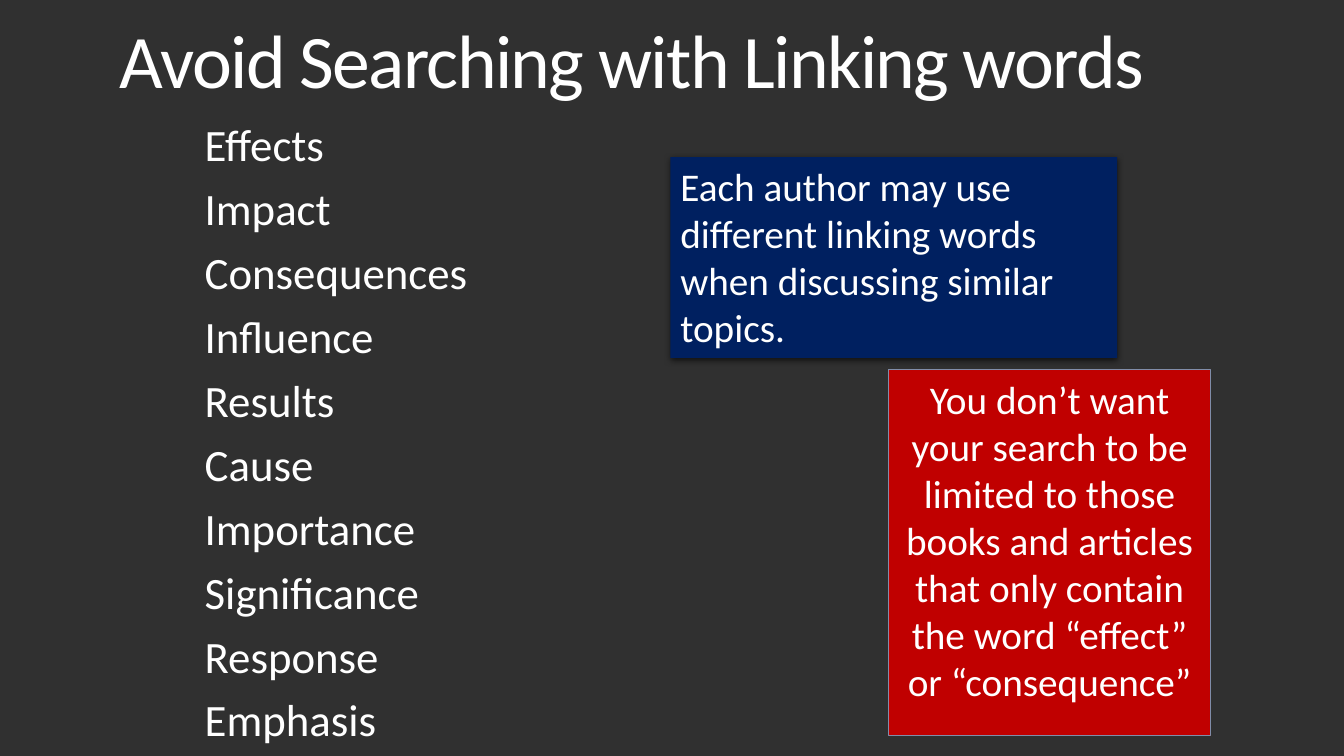
from lxml import etree
from pptx import Presentation
from pptx import util as u
from pptx.dml import color
from pptx.enum import shapes, text
from pptx.oxml import ns

TITLE = "Avoid Searching with Linking words"
LINKING_WORDS = [
    "Effects", "Impact", "Consequences", "Influence", "Results",
    "Cause", "Importance", "Significance", "Response", "Emphasis",
]
AUTHOR_NOTE = "Each author may use different linking words when discussing similar topics."
LIMIT_NOTE = (
    "You don’t want your search to be limited to those books and articles "
    "that only contain the word “effect” or “consequence”"
)
FRAME_FORMAT = {"word_wrap": True, "auto_size": text.MSO_AUTO_SIZE.NONE}


def rgb(value):
    """Return the colour for a hex string."""
    return color.RGBColor.from_string(value)


def apply(target, values):
    """Set each named attribute on the target."""
    for name, value in values.items():
        setattr(target, name, value)


def place(shape, box):
    """Move a shape to a box of left, top, width and height in inches."""
    apply(shape, dict(zip(("left", "top", "width", "height"), map(u.Inches, box))))


def write(shape, lines, size, anchor, para_format):
    """Fill a shape with one white paragraph per line."""
    frame = shape.text_frame
    apply(frame, {**FRAME_FORMAT, "vertical_anchor": anchor})
    for index, line in enumerate(lines):
        para = frame.add_paragraph() if index else frame.paragraphs[0]
        apply(para, para_format)
        span = para.add_run()
        span.text = line
        apply(span.font, {"name": "Calibri", "size": u.Pt(size)})
        span.font.color.rgb = rgb("FFFFFF")


def add_shadow(shape):
    """Give a shape a soft shadow below it."""
    effects = shape._element.spPr.find(ns.qn("a:effectLst"))
    shadow = etree.SubElement(
        effects, ns.qn("a:outerShdw"),
        blurRad=str(u.Pt(4.5)), dist=str(u.Pt(1.5)), dir="5400000", rotWithShape="0",
    )
    black = etree.SubElement(shadow, ns.qn("a:srgbClr"), val="000000")
    etree.SubElement(black, ns.qn("a:alpha"), val="63000")


def build_title(page, box):
    """Write the heading in the title placeholder."""
    title = page.shapes.title
    place(title, box)
    write(title, [TITLE], 54, text.MSO_ANCHOR.MIDDLE,
          {"alignment": text.PP_ALIGN.CENTER, "line_spacing": 0.85})
    span = title.text_frame.paragraphs[0].runs[0]
    span._r.get_or_add_rPr().set("spc", "-120")


def build_word_list(page, box):
    """List the linking words in the body placeholder."""
    body = page.placeholders[1]
    place(body, box)
    write(body, LINKING_WORDS, 32, text.MSO_ANCHOR.TOP,
          {"alignment": text.PP_ALIGN.LEFT, "line_spacing": 0.85, "space_before": u.Pt(13)})
    for para in body.text_frame.paragraphs:
        properties = para._p.get_or_add_pPr()
        properties.set("marL", str(u.Inches(0.1)))
        properties.set("indent", "0")
        etree.SubElement(properties, ns.qn("a:buNone"))


def build_note(page, box, note, fill, alignment, line=None):
    """Add a filled note, outlined if a line colour is given."""
    shape = page.shapes.add_shape(shapes.MSO_SHAPE.RECTANGLE, *map(u.Inches, box))
    shape.shadow.inherit = False
    shape.fill.solid()
    shape.fill.fore_color.rgb = rgb(fill)
    if line:
        shape.line.color.rgb = rgb(line)
        shape.line.width = u.Pt(0.75)
    else:
        shape.line.fill.background()
    write(shape, [note], 28, text.MSO_ANCHOR.TOP, {"alignment": alignment})
    return shape


def main():
    """Build the slide and save it."""
    deck = Presentation()
    apply(deck, {"slide_width": u.Inches(13.33), "slide_height": u.Inches(7.5)})
    page = deck.slides.add_slide(deck.slide_layouts[1])
    page.background.fill.solid()
    page.background.fill.fore_color.rgb = rgb("303030")
    build_title(page, (0.96, 0.11, 10.62, 1.08))
    build_word_list(page, (1.83, 1.19, 10.62, 4.72))
    author_note = build_note(page, (6.65, 1.56, 4.43, 1.99), AUTHOR_NOTE,
                             "002060", text.PP_ALIGN.LEFT)
    add_shadow(author_note)
    build_note(page, (8.81, 3.67, 3.2, 3.63), LIMIT_NOTE,
               "C00000", text.PP_ALIGN.CENTER, "808DA9")
    deck.save("out.pptx")


if __name__ == "__main__":
    main()
